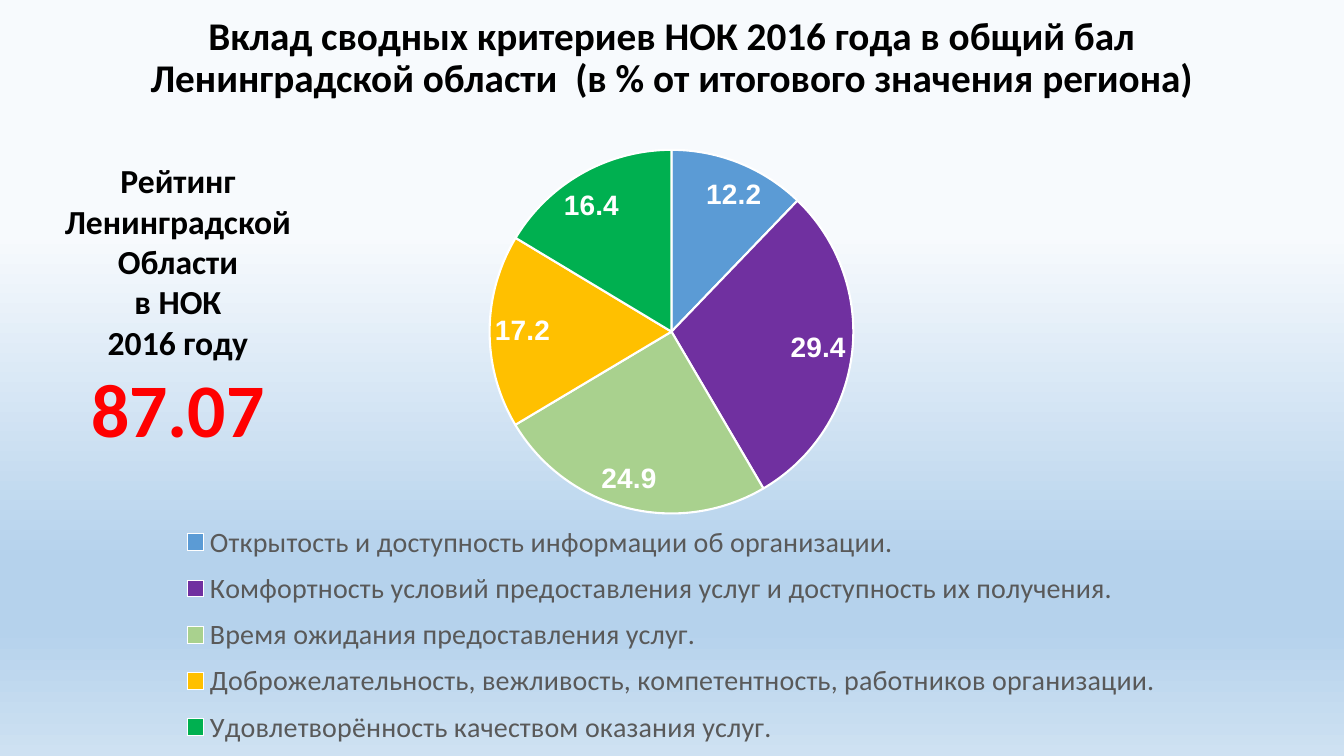
import pptx
import pptx.chart.data
import pptx.dml.color
import pptx.enum.chart
import pptx.enum.text
import pptx.oxml
import pptx.oxml.ns
import pptx.util
from lxml import etree

Inches = pptx.util.Inches
Pt = pptx.util.Pt
Align = pptx.enum.text.PP_ALIGN

# Content
TITLE = ("Вклад сводных критериев НОК 2016 года в общий бал "
         "Ленинградской области  (в % от итогового значения региона)")
RATING_LINES = ["Рейтинг", "Ленинградской", "Области", "в НОК", "2016 году"]
RATING_SCORE = "87.07"
CRITERIA = [  # name, share of the total, slice colour
    ("Открытость и доступность информации об организации.", 12.2, "5B9BD5"),
    ("Комфортность условий предоставления услуг и доступность их получения.", 29.4, "7030A0"),
    ("Время ожидания предоставления услуг.", 24.9, "A9D18E"),
    ("Доброжелательность, вежливость, компетентность, работников организации.", 17.2, "FFC000"),
    ("Удовлетворённость качеством оказания услуг.", 16.4, "00B050"),
]

THEME = {
    "font": "Calibri", "label_font": "Arial",
    "text": "000000", "score": "FF0000", "legend": "595959", "label": "FFFFFF",
    "title_size": 28, "rating_size": 24, "score_size": 54, "chart_size": 20,
    "background": [(31, "F7FAFD"), (74, "B5D2EC"), (83, "B5D2EC"), (100, "CEE1F2")],
}

# Places: left, top, width, height in inches; layouts as fractions of the chart
TITLE_BOX = (0.91, 0, 11.5, 1.05)
RATING_BOX = (0.53, 1.54, 2.47, 3.03)
CHART_BOX = (0.91, 1.17, 11.5, 6.33)
PIE_LAYOUT = (0.06, 0.05, 0.88, 0.57)
LEGEND_LAYOUT = (0.08, 0.62, 0.84, 0.38)


def set_font(font, size, color, bold=False, name=THEME["font"]):
    font.name, font.size, font.bold = name, Pt(size), bold
    font.color.rgb = pptx.dml.color.RGBColor.from_string(color)


def add_text(slide, box, lines, anchor, wrap, spacing=1.0):
    """Add a centred text box; each line is (text, size, colour)."""
    frame = slide.shapes.add_textbox(*map(Inches, box)).text_frame
    frame.word_wrap = wrap
    frame.vertical_anchor = anchor
    for index, (text, size, color) in enumerate(lines):
        paragraph = frame.add_paragraph() if index else frame.paragraphs[0]
        paragraph.text = text
        paragraph.alignment = Align.CENTER
        paragraph.line_spacing = spacing
        set_font(paragraph.font, size, color, bold=True)


def manual_layout(fractions, inner=False):
    layout = pptx.oxml.parse_xml(
        f'<c:layout {pptx.oxml.ns.nsdecls("c")}><c:manualLayout/></c:layout>')
    settings = [("layoutTarget", "inner")] if inner else []
    settings += [("xMode", "edge"), ("yMode", "edge"), *zip("xywh", fractions)]
    for tag, value in settings:
        etree.SubElement(layout[0], pptx.oxml.ns.qn(f"c:{tag}")).set("val", str(value))
    return layout


def paint_background(slide):
    fill = slide.background.fill
    fill.gradient()
    fill.gradient_angle = 270
    stops = fill.gradient_stops[0]._gs.getparent()
    for stop in list(stops):
        stops.remove(stop)
    for position, color in THEME["background"]:
        stop = etree.SubElement(stops, pptx.oxml.ns.qn("a:gs"), pos=str(position * 1000))
        etree.SubElement(stop, pptx.oxml.ns.qn("a:srgbClr"), val=color)


def add_pie(slide):
    names, shares, colors = zip(*CRITERIA)
    data = pptx.chart.data.CategoryChartData(number_format="0.0")
    data.categories = names
    data.add_series("Series 1", shares)
    pie = slide.shapes.add_chart(
        pptx.enum.chart.XL_CHART_TYPE.PIE, *map(Inches, CHART_BOX), data).chart
    pie.has_title = False
    set_font(pie.font, 10, THEME["text"])

    # Slices
    plot = pie.plots[0]
    plot.vary_by_categories = True
    for index, color in enumerate(colors):
        slice_format = plot.series[0].points[index].format
        slice_format.fill.solid()
        slice_format.fill.fore_color.rgb = pptx.dml.color.RGBColor.from_string(color)
        slice_format.line.color.rgb = pptx.dml.color.RGBColor.from_string(THEME["label"])
        slice_format.line.width = Pt(1.5)

    # Value labels
    labels = plot.series[0].data_labels
    labels.show_value = True
    labels.number_format = "0.0"
    labels.number_format_is_linked = False
    labels.position = pptx.enum.chart.XL_LABEL_POSITION.BEST_FIT
    set_font(labels.font, THEME["chart_size"], THEME["label"], True, THEME["label_font"])

    # Legend
    pie.has_legend = True
    pie.legend.position = pptx.enum.chart.XL_LEGEND_POSITION.BOTTOM
    pie.legend.include_in_layout = False
    set_font(pie.legend.font, THEME["chart_size"], THEME["legend"])

    # Manual places of the pie and the legend
    plot_area = plot._element.getparent()
    for parent, fractions, at, inner in (
            (plot_area, PIE_LAYOUT, 0, True),
            (pie.legend._element, LEGEND_LAYOUT, 1, False)):
        for old in parent.findall(pptx.oxml.ns.qn("c:layout")):
            parent.remove(old)
        parent.insert(at, manual_layout(fractions, inner))


def main():
    deck = pptx.Presentation()
    deck.slide_width, deck.slide_height = Inches(13.33), Inches(7.5)
    slide = deck.slides.add_slide(deck.slide_layouts[6])
    paint_background(slide)
    add_pie(slide)

    # Title and rating
    anchors = pptx.enum.text.MSO_ANCHOR
    add_text(slide, TITLE_BOX, [(TITLE, THEME["title_size"], THEME["text"])],
             anchors.BOTTOM, True, 0.9)
    rating = [(line, THEME["rating_size"], THEME["text"]) for line in RATING_LINES]
    rating.append((RATING_SCORE, THEME["score_size"], THEME["score"]))
    add_text(slide, RATING_BOX, rating, anchors.TOP, False)
    deck.save("out.pptx")


if __name__ == "__main__":
    main()
